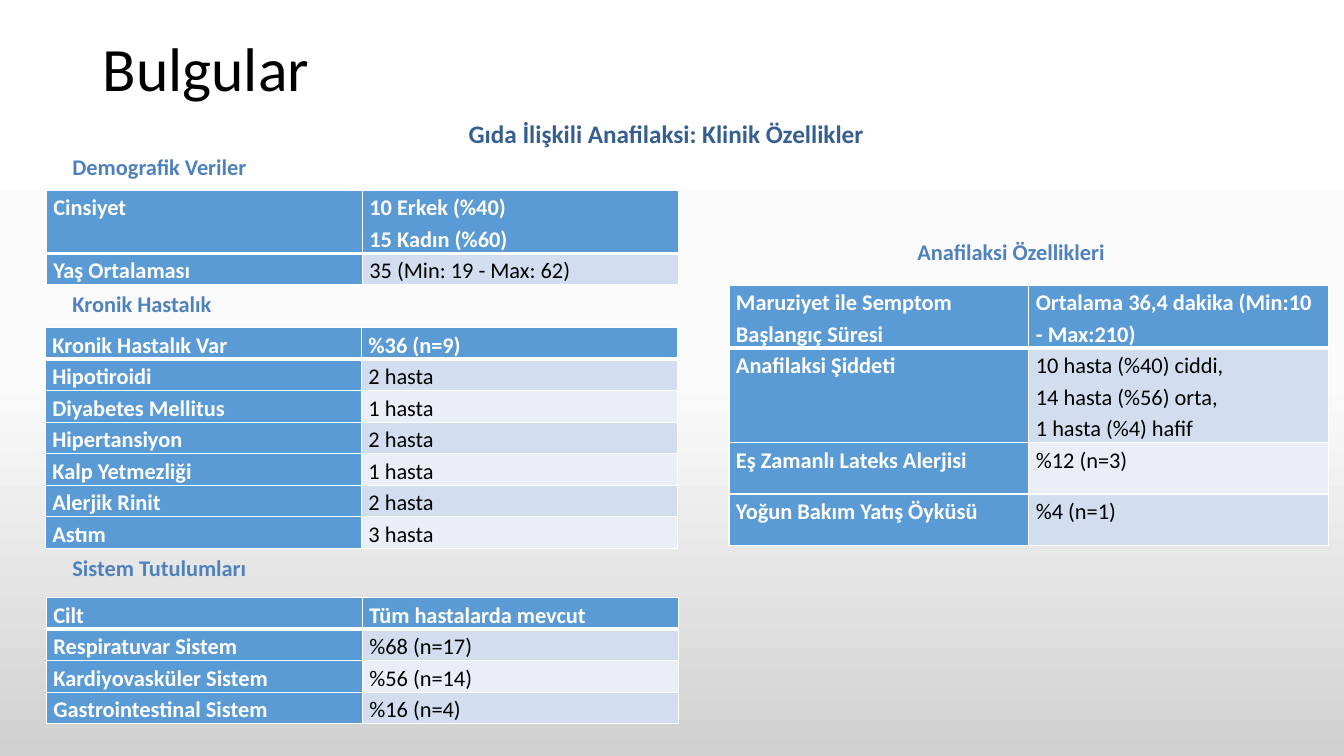
from copy import deepcopy
from dataclasses import dataclass

from lxml.etree import SubElement
from pptx import Presentation
from pptx.dml.color import RGBColor
from pptx.enum.text import MSO_ANCHOR, MSO_AUTO_SIZE
from pptx.oxml.ns import qn
from pptx.util import Inches, Pt


@dataclass(frozen=True)
class Theme:
    font: str = "Calibri"
    title_size: int = 44
    subtitle_size: int = 18
    body_size: int = 16
    black: str = "000000"
    white: str = "FFFFFF"
    subtitle: str = "365F91"
    heading: str = "4F81BD"
    label_fill: str = "5B9BD5"
    bands: tuple = ("D2DEEF", "EAEFF7")
    backdrop: tuple = ((0, "FFFFFF"), (0.5, "FBFBFB"), (1, "D1D1D1"))
    line_spacing: float = 1.15
    line_height: float = 0.31
    cell_inset: float = 0.07


class SlideBuilder:
    def __init__(self, page, theme):
        self.page = page
        self.theme = theme

    def background(self):
        fill = self.page.background.fill
        fill.gradient()
        fill.gradient_angle = 270
        stop_list = self.page.element.find(".//" + qn("a:gsLst"))
        stop_list.append(deepcopy(stop_list[0]))
        for stop, (position, color) in zip(fill.gradient_stops, self.theme.backdrop):
            stop.position = position
            stop.color.rgb = RGBColor.from_string(color)

    def span(self, para, text, size, color, bold):
        span = para.add_run()
        span.text = text
        span.font.name = self.theme.font
        span.font.size = Pt(size)
        span.font.bold = bold
        span.font.color.rgb = RGBColor.from_string(color)

    def text(self, place, text, size, color, bold=True):
        box = self.page.shapes.add_textbox(*map(Inches, place))
        frame = box.text_frame
        frame.word_wrap = False
        frame.auto_size = MSO_AUTO_SIZE.SHAPE_TO_FIT_TEXT
        self.span(frame.paragraphs[0], text, size, color, bold)
        return frame

    def title(self, place, text):
        frame = self.text(place, text, self.theme.title_size, self.theme.black, False)
        frame.word_wrap = True
        frame.auto_size = MSO_AUTO_SIZE.NONE
        frame.vertical_anchor = MSO_ANCHOR.MIDDLE
        frame.paragraphs[0].line_spacing = 0.9

    def heading(self, left, top, width, text):
        self.text((left, top, width, 0.37), text, self.theme.body_size, self.theme.heading)

    def borders(self, cell, bottom):
        properties = cell._tc.get_or_add_tcPr()
        for side, width in (("L", 1), ("R", 1), ("T", 1), ("B", bottom)):
            line = SubElement(properties, qn("a:ln" + side), w=str(Pt(width)))
            paint = SubElement(line, qn("a:solidFill"))
            SubElement(paint, qn("a:srgbClr"), val=self.theme.white)

    def cell(self, cell, lines, fill, color, bold, bottom):
        theme = self.theme
        self.borders(cell, bottom)
        cell.fill.solid()
        cell.fill.fore_color.rgb = RGBColor.from_string(fill)
        cell.margin_left = cell.margin_right = Inches(theme.cell_inset)
        cell.margin_top = cell.margin_bottom = 0
        frame = cell.text_frame
        for index, line in enumerate(lines):
            para = frame.add_paragraph() if index else frame.paragraphs[0]
            para.line_spacing = theme.line_spacing
            self.span(para, line, theme.body_size, color, bold)

    def table(self, left, top, width, rows, heights=None):
        theme = self.theme
        heights = heights or [theme.line_height * len(lines) for _, *lines in rows]
        place = map(Inches, (left, top, width, sum(heights)))
        table = self.page.shapes.add_table(len(rows), 2, *place).table
        for column in table.columns:
            column.width = Inches(width / 2)
        for index, (label, *lines) in enumerate(rows):
            table.rows[index].height = Inches(heights[index])
            header = index == 0
            bottom = 3 if header else 1
            fill = theme.label_fill if header else theme.bands[(index - 1) % 2]
            color = theme.white if header else theme.black
            self.cell(table.cell(index, 0), [label], theme.label_fill, theme.white, True, bottom)
            self.cell(table.cell(index, 1), lines, fill, color, header, bottom)


DEMOGRAPHICS = [
    ("Cinsiyet", "10 Erkek (%40)", "15 Kadın (%60)"),
    ("Yaş Ortalaması", "35 (Min: 19 - Max: 62)"),
]
CHRONIC_DISEASES = [
    ("Kronik Hastalık Var", "%36 (n=9)"),
    ("Hipotiroidi", "2 hasta"),
    ("Diyabetes Mellitus", "1 hasta"),
    ("Hipertansiyon", "2 hasta"),
    ("Kalp Yetmezliği", "1 hasta"),
    ("Alerjik Rinit", "2 hasta"),
    ("Astım", "3 hasta"),
]
SYSTEMS = [
    ("Cilt", "Tüm hastalarda mevcut"),
    ("Respiratuvar Sistem", "%68 (n=17)"),
    ("Kardiyovasküler Sistem", "%56 (n=14)"),
    ("Gastrointestinal Sistem", "%16 (n=4)"),
]
ANAPHYLAXIS = [
    ("Maruziyet ile Semptom Başlangıç Süresi", "Ortalama 36,4 dakika (Min:10 - Max:210)"),
    ("Anafilaksi Şiddeti", "10 hasta (%40) ciddi,", "14 hasta (%56) orta,", "1 hasta (%4) hafif"),
    ("Eş Zamanlı Lateks Alerjisi", "%12 (n=3)"),
    ("Yoğun Bakım Yatış Öyküsü", "%4 (n=1)"),
]


def main():
    deck = Presentation()
    deck.slide_width = Inches(13.33)
    deck.slide_height = Inches(7.5)
    theme = Theme()
    builder = SlideBuilder(deck.slides.add_slide(deck.slide_layouts[6]), theme)

    builder.background()
    builder.table(0.46, 1.89, 6.27, DEMOGRAPHICS)
    builder.table(0.45, 3.25, 6.27, CHRONIC_DISEASES)
    builder.table(0.46, 5.93, 6.27, SYSTEMS)
    builder.table(7.23, 2.83, 5.95, ANAPHYLAXIS, [0.62, 0.93, 0.51, 0.51])

    builder.text(
        (4.55, 1.12, 4.15, 0.4),
        "Gıda İlişkili Anafilaksi: Klinik Özellikler",
        theme.subtitle_size,
        theme.subtitle,
    )
    builder.heading(0.62, 1.47, 1.95, "Demografik Veriler")
    builder.heading(0.62, 2.83, 1.65, "Kronik Hastalık")
    builder.heading(0.62, 5.45, 1.95, "Sistem Tutulumları")
    builder.heading(9, 2.31, 2.08, "Anafilaksi Özellikleri")
    builder.title((0.92, 0.4, 11.5, 0.63), "Bulgular")

    deck.save("out.pptx")


if __name__ == "__main__":
    main()
